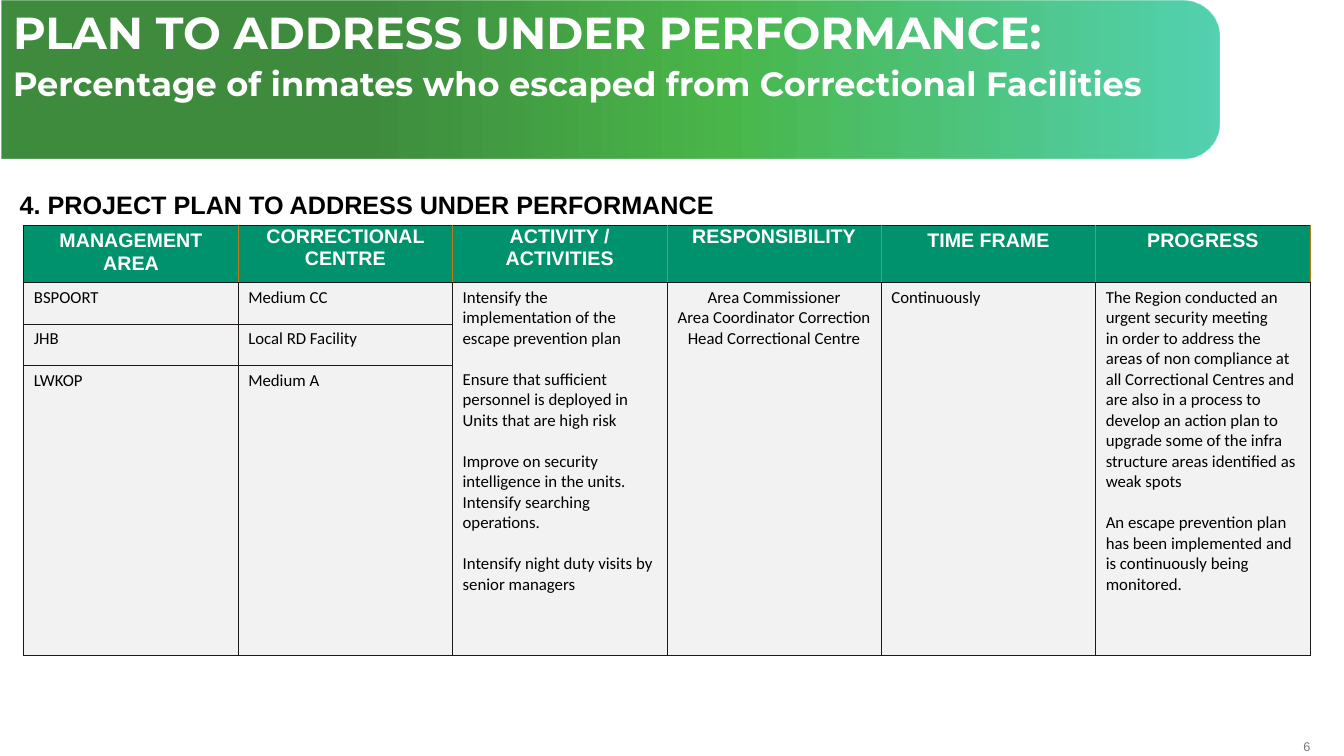
import copy
import pptx
import pptx.util
import pptx.dml.color
import pptx.enum.shapes
import pptx.enum.text
import pptx.oxml
import pptx.oxml.ns

Pt = pptx.util.Pt
ALIGN = pptx.enum.text.PP_ALIGN

# Content
TITLE = [("PLAN TO ADDRESS UNDER PERFORMANCE:", 32),
         ("Percentage of inmates who escaped from Correctional Facilities", 24)]
HEADING = "4. PROJECT PLAN TO ADDRESS UNDER PERFORMANCE"
PAGE = "6"
HEADS = ["MANAGEMENT AREA", "CORRECTIONAL CENTRE", "ACTIVITY / ACTIVITIES",
         "RESPONSIBILITY", "TIME FRAME", "PROGRESS"]
AREAS = [("BSPOORT", "Medium CC"), ("JHB", "Local RD Facility"),
         ("LWKOP", "Medium A")]
# Each merged column holds groups of paragraphs, set apart by a gap
MERGED = [
    [["Intensify the implementation of the escape prevention plan"],
     ["Ensure that sufficient personnel is deployed in Units that are high risk"],
     ["Improve on security intelligence in the units.",
      "Intensify searching operations."],
     ["Intensify night duty visits by senior managers"]],
    [["Area Commissioner", "Area Coordinator Correction",
      "Head Correctional Centre"]],
    [["Continuously"]],
    [["The Region conducted an urgent security meeting\vin order to address "
      "the areas of non compliance at all Correctional Centres and are also "
      "in a process to develop an action plan to upgrade some of the infra "
      "structure areas identified as weak spots"],
     ["An escape prevention plan has been implemented and is continuously "
      "being monitored."]],
]
# Banner gradient: place %, colour, opacity %
STOPS = [(30, "006600", 75), (59, "009900", 71), (100, "00BC8D", 67)]
GREEN, GREY, INK, GOLD = "00926C", "F2F2F2", "1E1918", "BF7B17"
ROWS = [41, 29.6, 29.6, 207.2]
COL, GAP, TIGHT = 153.15, 14.65, 0.72


def color(code):
    return pptx.dml.color.RGBColor.from_string(code)


def style(para, size, face, code, bold=False, align=ALIGN.LEFT):
    para.alignment = align
    font = para.font
    font.size, font.name, font.bold = Pt(size), face, bold
    font.color.rgb = color(code)


def add_text(left, top, width, height):
    frame = slide.shapes.add_textbox(
        Pt(left), Pt(top), Pt(width), Pt(height)).text_frame
    frame.word_wrap = True
    return frame


def paint(cell, fill, side, top=INK):
    cell.fill.solid()
    cell.fill.fore_color.rgb = color(fill)
    props = cell._tc.get_or_add_tcPr()
    edges = zip("LRTB", (side[0], side[1], top, INK))
    for spot, (edge, code) in enumerate(edges):
        props.insert(spot, pptx.oxml.parse_xml(
            f'<a:ln{edge} {pptx.oxml.ns.nsdecls("a")} w="6350"><a:solidFill>'
            f'<a:srgbClr val="{code}"/></a:solidFill></a:ln{edge}>'))


def fill_cell(cell, groups, align=ALIGN.LEFT):
    frame = cell.text_frame
    para = None
    for group in groups:
        for i, line in enumerate(group):
            first = para is None
            para = frame.paragraphs[0] if first else frame.add_paragraph()
            para.text = line
            style(para, 12, "Calibri", "000000", align=align)
            if i == 0 and not first:
                para.space_before = Pt(GAP)


deck = pptx.Presentation()
deck.slide_width, deck.slide_height = Pt(960), Pt(540)
slide = deck.slides.add_slide(deck.slide_layouts[6])

# Page number
frame = add_text(907.9, 527.8, 28.1, 10.8)
frame.margin_left = frame.margin_right = 0
frame.margin_top = frame.margin_bottom = 0
frame.vertical_anchor = pptx.enum.text.MSO_ANCHOR.MIDDLE
frame.text = PAGE
style(frame.paragraphs[0], 9, "Arial", "77787B", align=ALIGN.RIGHT)

# Banner, turned so that its round corners face right
banner = slide.shapes.add_shape(
    pptx.enum.shapes.MSO_SHAPE.ROUND_2_SAME_RECTANGLE,
    Pt(379.4), Pt(-378), Pt(113), Pt(869.8))
banner.rotation = 90
banner.adjustments[0], banner.adjustments[1] = 0.233, 0
banner.shadow.inherit = False
banner.line.fill.background()
banner.fill.gradient()
banner.fill.gradient_angle = 90
last = banner.fill.gradient_stops[1]._gs
last.addprevious(copy.deepcopy(last))
for stop, (place, code, clear) in zip(banner.fill.gradient_stops, STOPS):
    stop.position = place / 100
    stop.color.rgb = color(code)
    tint = stop._gs[0]
    tint.append(pptx.oxml.parse_xml(
        f'<a:alpha {pptx.oxml.ns.nsdecls("a")} val="{clear * 1000}"/>'))

# Heading
frame = add_text(7, 131.8, 695, 28.8)
frame.text = HEADING
style(frame.paragraphs[0], 18, "Arial", "000000", True)

# Table
grid = slide.shapes.add_table(
    len(ROWS), len(HEADS), Pt(17), Pt(160.8),
    Pt(COL * len(HEADS)), Pt(sum(ROWS))).table
for row, height in zip(grid.rows, ROWS):
    row.height = Pt(height)
for col in grid.columns:
    col.width = Pt(COL)

for c, head in enumerate(HEADS):
    cell = grid.cell(0, c)
    cell.text = head
    style(cell.text_frame.paragraphs[0], 14, "Arial", "FFFFFF", True, ALIGN.CENTER)
    if c in (1, 2, 3):
        cell.margin_left = cell.margin_right = cell.margin_top = Pt(TIGHT)
        cell.margin_bottom = 0
    paint(cell, GREEN, (GOLD if c else INK, GOLD))
    for r in range(1, len(ROWS)):
        paint(grid.cell(r, c), GREY, (INK, INK))

for r, area in enumerate(AREAS, 1):
    for c, name in enumerate(area):
        fill_cell(grid.cell(r, c), [[name]])
for c, groups in enumerate(MERGED, 2):
    cell = grid.cell(1, c)
    cell.merge(grid.cell(3, c))
    fill_cell(cell, groups, ALIGN.CENTER if c == 3 else ALIGN.LEFT)

# Title
frame = add_text(2.2, 4.3, 862.6, 41)
for i, (line, size) in enumerate(TITLE):
    para = frame.add_paragraph() if i else frame.paragraphs[0]
    para.text = line
    para.line_spacing, para.space_after = 0.9, Pt(6)
    style(para, size, "Montserrat", "FFFFFF", True)

deck.save("out.pptx")
